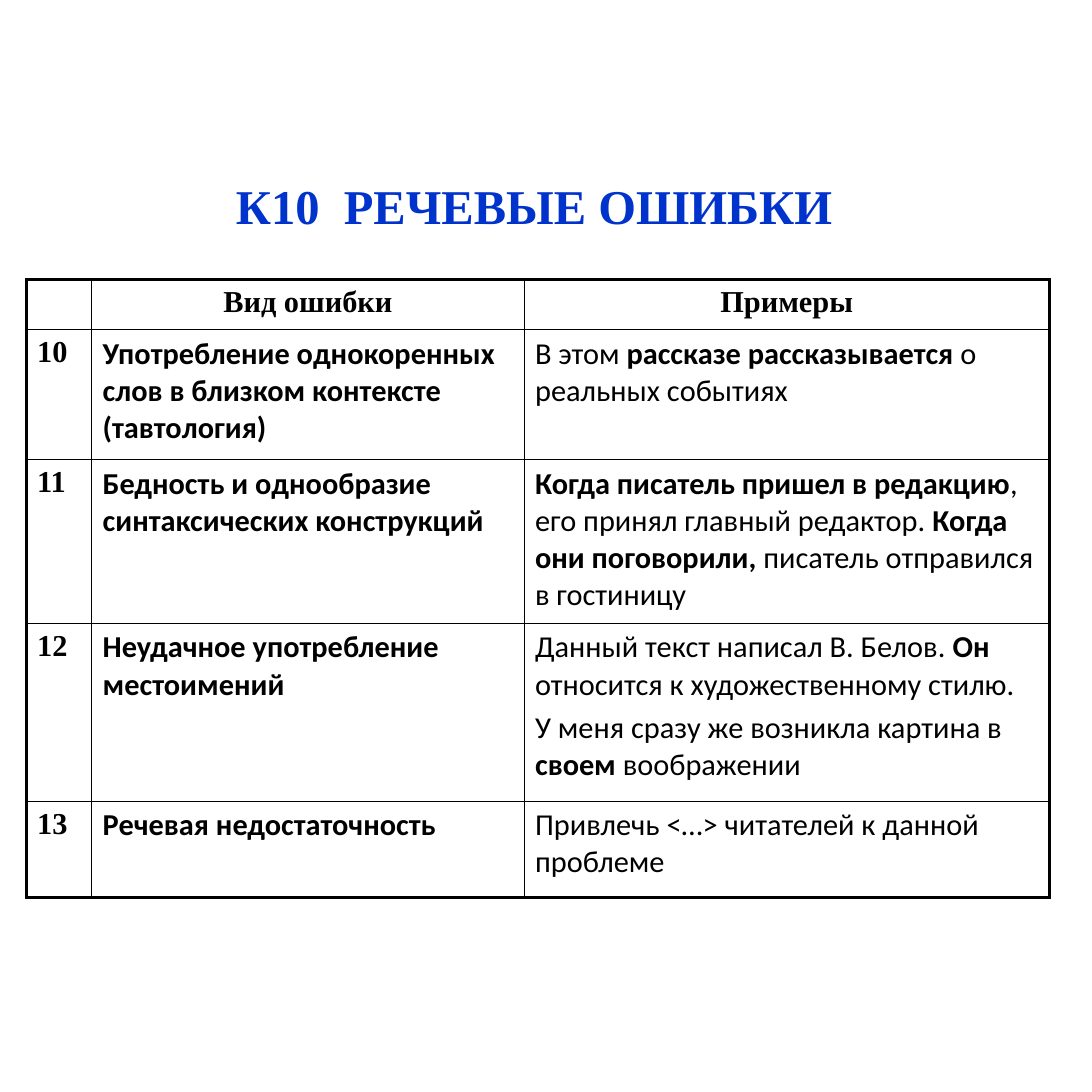
import pptx
import pptx.dml.color
import pptx.enum.text
import pptx.util
from lxml import etree
from pptx.oxml.ns import qn

Inches = pptx.util.Inches
Pt = pptx.util.Pt
ALIGN = pptx.enum.text.PP_ALIGN
BLUE = pptx.dml.color.RGBColor(0x00, 0x33, 0xCC)
BLACK = pptx.dml.color.RGBColor(0, 0, 0)
SERIF, SANS = "Times New Roman", "Calibri"

# Content: each cell is a list of paragraphs, asterisks enclose bold words
HEADING = "К10  РЕЧЕВЫЕ ОШИБКИ"
ERRORS = [
    ([], ["*Вид ошибки*"], ["*Примеры*"]),
    (["*10*"],
     ["*Употребление однокоренных слов в близком контексте (тавтология)*"],
     ["В этом *рассказе рассказывается *о реальных событиях"]),
    (["*11*"],
     ["*Бедность и однообразие синтаксических конструкций*"],
     ["*Когда писатель пришел в редакцию*, его принял главный редактор. "
      "*Когда они поговорили, *писатель отправился в гостиницу"]),
    (["*12*"],
     ["*Неудачное употребление местоимений*"],
     ["Данный текст написал В. Белов. *Он *относится к художественному стилю.",
      "У меня сразу же возникла картина в *своем *воображении"]),
    (["*13*"],
     ["*Речевая недостаточность*"],
     ["Привлечь <…> читателей к данной проблеме"]),
]
COLUMN_WIDTHS = [0.6, 3.96, 4.81]
ROW_HEIGHTS = [0.46, 1.19, 1.5, 1.63, 0.88]
OUTER_LINE, INNER_LINE = Pt(2.25), Pt(1)


def fill_cell(cell, paragraphs, font_name, alignment):
    for index, marked_text in enumerate(paragraphs):
        frame = cell.text_frame
        paragraph = frame.add_paragraph() if index else frame.paragraphs[0]
        paragraph.alignment = alignment
        if index:
            paragraph.space_before = Pt(4)
        paragraph.font.name = font_name
        paragraph.font.size = Pt(20)
        paragraph.font.color.rgb = BLACK
        for part, words in enumerate(marked_text.split("*")):
            if words:
                run = paragraph.add_run()
                run.text = words
                run.font.bold = part % 2 == 1


def draw_borders(cell, outer_sides):
    properties = cell._tc.get_or_add_tcPr()
    for side in "LRTB":
        width = OUTER_LINE if side in outer_sides else INNER_LINE
        line = etree.SubElement(properties, qn(f"a:ln{side}"), w=str(width))
        solid = etree.SubElement(line, qn("a:solidFill"))
        etree.SubElement(solid, qn("a:srgbClr"), val=str(BLACK))


presentation = pptx.Presentation()
presentation.slide_width = presentation.slide_height = Inches(10)
slide = presentation.slides.add_slide(presentation.slide_layouts[5])

# Heading
heading = slide.shapes.title
heading.left, heading.top = Inches(2.16), Inches(1.61)
heading.width, heading.height = Inches(7.48), Inches(0.94)
frame = heading.text_frame
frame.margin_left = frame.margin_top = frame.margin_right = frame.margin_bottom = 0
frame.vertical_anchor = pptx.enum.text.MSO_ANCHOR.TOP
frame.text = HEADING
paragraph = frame.paragraphs[0]
paragraph.alignment = ALIGN.LEFT
paragraph.font.name = SERIF
paragraph.font.size = Pt(32)
paragraph.font.bold = True
paragraph.font.color.rgb = BLUE

# Table of errors
errors = slide.shapes.add_table(
    len(ERRORS), len(COLUMN_WIDTHS), Inches(0.24), Inches(2.56),
    Inches(sum(COLUMN_WIDTHS)), Inches(sum(ROW_HEIGHTS))).table
errors.first_row = errors.horz_banding = False
for column, width in zip(errors.columns, COLUMN_WIDTHS):
    column.width = Inches(width)
for row, height in zip(errors.rows, ROW_HEIGHTS):
    row.height = Inches(height)

last_row, last_column = len(ERRORS) - 1, len(COLUMN_WIDTHS) - 1
for r, error in enumerate(ERRORS):
    for c, paragraphs in enumerate(error):
        cell = errors.cell(r, c)
        fill_cell(cell, paragraphs, SERIF if r == 0 or c == 0 else SANS,
                  ALIGN.CENTER if r == 0 else ALIGN.LEFT)
        edges = {"L": c == 0, "R": c == last_column, "T": r == 0, "B": r == last_row}
        draw_borders(cell, [side for side, outer in edges.items() if outer])
        cell.fill.background()

presentation.save("out.pptx")
